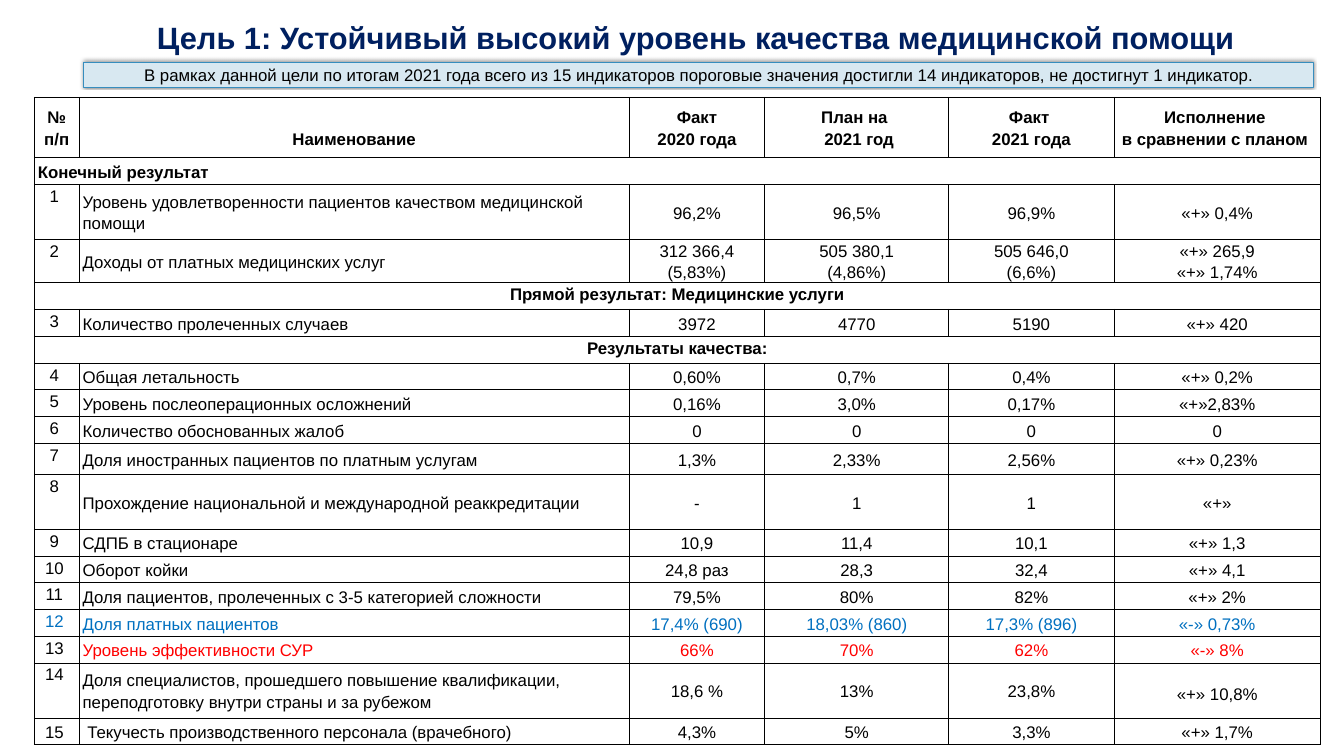
"""Build a slide with a table of quality indicators for goal 1."""
import lxml.etree
import pptx
import pptx.dml.color
import pptx.enum.shapes
import pptx.enum.text
import pptx.oxml
import pptx.oxml.ns
import pptx.util

Inches = pptx.util.Inches
RGBColor = pptx.dml.color.RGBColor
ALIGN = pptx.enum.text.PP_ALIGN
ANCHOR = pptx.enum.text.MSO_ANCHOR
SHAPES = pptx.enum.shapes.MSO_SHAPE

BLACK = RGBColor(0x00, 0x00, 0x00)
NAVY = RGBColor(0x00, 0x20, 0x60)
BLUE = RGBColor(0x00, 0x70, 0xC0)
RED = RGBColor(0xFF, 0x00, 0x00)
PALE_BLUE = RGBColor(0xD8, 0xE8, 0xF1)
TEAL = RGBColor(0x36, 0x8D, 0xBE)

COLUMN_WIDTHS = [0.89, 10.91, 2.69, 3.65, 3.28, 4.09]
ROW_HEIGHT = 0.53
SPECIAL_HEIGHTS = {0: 1.2, 2: 1.09, 5: 0.54, 10: 0.62, 11: 1.09, 17: 1.09}
HEADERS = ["№ п/п", "Наименование", "Факт\n2020 года", "План на \n 2021 год",
           "Факт \n2021 года", "Исполнение \nв сравнении с планом "]
SECTIONS = {
    1: ("Конечный результат", ALIGN.LEFT, ANCHOR.MIDDLE),
    4: ("Прямой результат: Медицинские услуги", ALIGN.CENTER, ANCHOR.TOP),
    6: ("Результаты качества:", ALIGN.CENTER, ANCHOR.TOP),
}
INDICATORS = [
    ("Уровень удовлетворенности пациентов качеством медицинской помощи",
     "96,2%", "96,5%", "96,9%", "«+» 0,4%"),
    ("Доходы от платных медицинских услуг", "312 366,4\n(5,83%)", "505 380,1\n(4,86%)",
     "505 646,0\n(6,6%)", "«+» 265,9\n«+» 1,74%"),
    ("Количество пролеченных случаев", "3972", "4770", "5190", "«+» 420"),
    ("Общая летальность", "0,60%", "0,7%", "0,4%", "«+» 0,2%"),
    ("Уровень послеоперационных осложнений", "0,16%", "3,0%", "0,17%", "«+»2,83%"),
    ("Количество обоснованных жалоб", "0", "0", "0", "0"),
    ("Доля иностранных пациентов по платным услугам", "1,3%", "2,33%", "2,56%", "«+» 0,23%"),
    ("Прохождение национальной и международной реаккредитации", "-", "1", "1", "«+»"),
    ("СДПБ в стационаре", "10,9", "11,4", "10,1", "«+» 1,3"),
    ("Оборот койки", "24,8 раз", "28,3", "32,4", "«+» 4,1"),
    ("Доля пациентов, пролеченных с 3-5 категорией сложности", "79,5%", "80%", "82%", "«+» 2%"),
    ("Доля платных пациентов", "17,4% (690)", "18,03% (860)", "17,3% (896)", "«-» 0,73%"),
    ("Уровень эффективности СУР", "66%", "70%", "62%", "«-» 8%"),
    ("Доля специалистов, прошедшего повышение квалификации, "
     "переподготовку внутри страны и за рубежом", "18,6 %", "13%", "23,8%", "«+» 10,8%"),
    (" Текучесть производственного персонала (врачебного)", "4,3%", "5%", "3,3%", "«+» 1,7%"),
]
ROW_COLORS = {12: BLUE, 13: RED}


def write_text(frame, text, size=24, bold=False, color=BLACK, align=ALIGN.CENTER, spacing=None):
    frame.word_wrap = True
    for index, line in enumerate(text.split("\n")):
        paragraph = frame.add_paragraph() if index else frame.paragraphs[0]
        paragraph.alignment = align
        paragraph.line_spacing = spacing
        run = paragraph.add_run()
        run.text = line
        run.font.name = "Arial"
        run.font.size = pptx.util.Pt(size)
        run.font.bold = bold
        run.font.color.rgb = color


def format_cell(cell, anchor):
    cell.margin_left = cell.margin_right = Inches(0.07)
    cell.margin_top = cell.margin_bottom = 0
    cell.vertical_anchor = anchor
    cell.fill.background()
    properties = cell._tc.get_or_add_tcPr()
    for index, side in enumerate(("lnL", "lnR", "lnT", "lnB")):
        border = pptx.oxml.parse_xml(
            f'<a:{side} {pptx.oxml.ns.nsdecls("a")} w="12700"><a:solidFill>'
            f'<a:srgbClr val="{BLACK}"/></a:solidFill></a:{side}>')
        properties.insert(index, border)


presentation = pptx.Presentation()
presentation.slide_width = Inches(26.66)
presentation.slide_height = Inches(15)
slide = presentation.slides.add_slide(presentation.slide_layouts[6])

title = slide.shapes.add_shape(SHAPES.ROUNDED_RECTANGLE,
                               Inches(3.01), Inches(0.39), Inches(21.7), Inches(0.7))
title.adjustments[0] = 0.03
title.shadow.inherit = False
title.fill.background()
title.line.fill.background()
title.text_frame.vertical_anchor = ANCHOR.MIDDLE
write_text(title.text_frame, "Цель 1: Устойчивый высокий уровень качества медицинской помощи",
           size=44, bold=True, color=NAVY, align=ALIGN.LEFT)

row_heights = [SPECIAL_HEIGHTS.get(row, ROW_HEIGHT) for row in range(19)]
table = slide.shapes.add_table(len(row_heights), len(COLUMN_WIDTHS), Inches(0.68), Inches(1.93),
                               Inches(sum(COLUMN_WIDTHS)), Inches(sum(row_heights))).table
table.first_row = table.horz_banding = False
for column, width in zip(table.columns, COLUMN_WIDTHS):
    column.width = Inches(width)

number = 0
for row, height in enumerate(row_heights):
    table.rows[row].height = Inches(height)
    cells = [table.cell(row, column) for column in range(len(COLUMN_WIDTHS))]
    for cell in cells:
        format_cell(cell, ANCHOR.MIDDLE)
    if row == 0:
        for cell, header in zip(cells, HEADERS):
            write_text(cell.text_frame, header, bold=True, spacing=1.15)
        cells[1].margin_top = Inches(0.42)
    elif row in SECTIONS:
        heading, align, anchor = SECTIONS[row]
        cells[0].merge(cells[-1])
        cells[0].vertical_anchor = anchor
        write_text(cells[0].text_frame, heading, bold=True, align=align, spacing=1.15)
    else:
        number += 1
        color = ROW_COLORS.get(number, BLACK)
        write_text(cells[0].text_frame, f"{number} ",
                   color=BLUE if color == BLUE else BLACK, spacing=1.15)
        if number < len(INDICATORS):
            cells[0].vertical_anchor = ANCHOR.TOP
        for column, value in enumerate(INDICATORS[number - 1], start=1):
            write_text(cells[column].text_frame, value, color=color,
                       align=ALIGN.LEFT if column == 1 else ALIGN.CENTER,
                       spacing=1.5 if (number, column) == (14, 5) else 1.15)
        if number == 2:
            cells[3].vertical_anchor = cells[4].vertical_anchor = ANCHOR.TOP

summary = slide.shapes.add_shape(SHAPES.RECTANGLE,
                                 Inches(1.66), Inches(1.23), Inches(24.4), Inches(0.5))
summary.fill.solid()
summary.fill.fore_color.rgb = PALE_BLUE
summary.line.color.rgb = TEAL
summary.line.width = pptx.util.Pt(0.75)
summary.shadow.inherit = False
effects = summary._element.spPr.find(pptx.oxml.ns.qn("a:effectLst"))
shadow = lxml.etree.SubElement(effects, pptx.oxml.ns.qn("a:outerShdw"),
                               blurRad="63500", dist="25400", dir="14700000")
shadow_color = lxml.etree.SubElement(shadow, pptx.oxml.ns.qn("a:srgbClr"), val=str(BLACK))
lxml.etree.SubElement(shadow_color, pptx.oxml.ns.qn("a:alpha"), val="50000")
summary.text_frame.vertical_anchor = ANCHOR.TOP
summary.text_frame.auto_size = pptx.enum.text.MSO_AUTO_SIZE.SHAPE_TO_FIT_TEXT
write_text(summary.text_frame,
           "В рамках данной цели по итогам 2021 года всего из 15 индикаторов "
           "пороговые значения достигли 14 индикаторов, не достигнут 1 индикатор.")

presentation.save("out.pptx")
